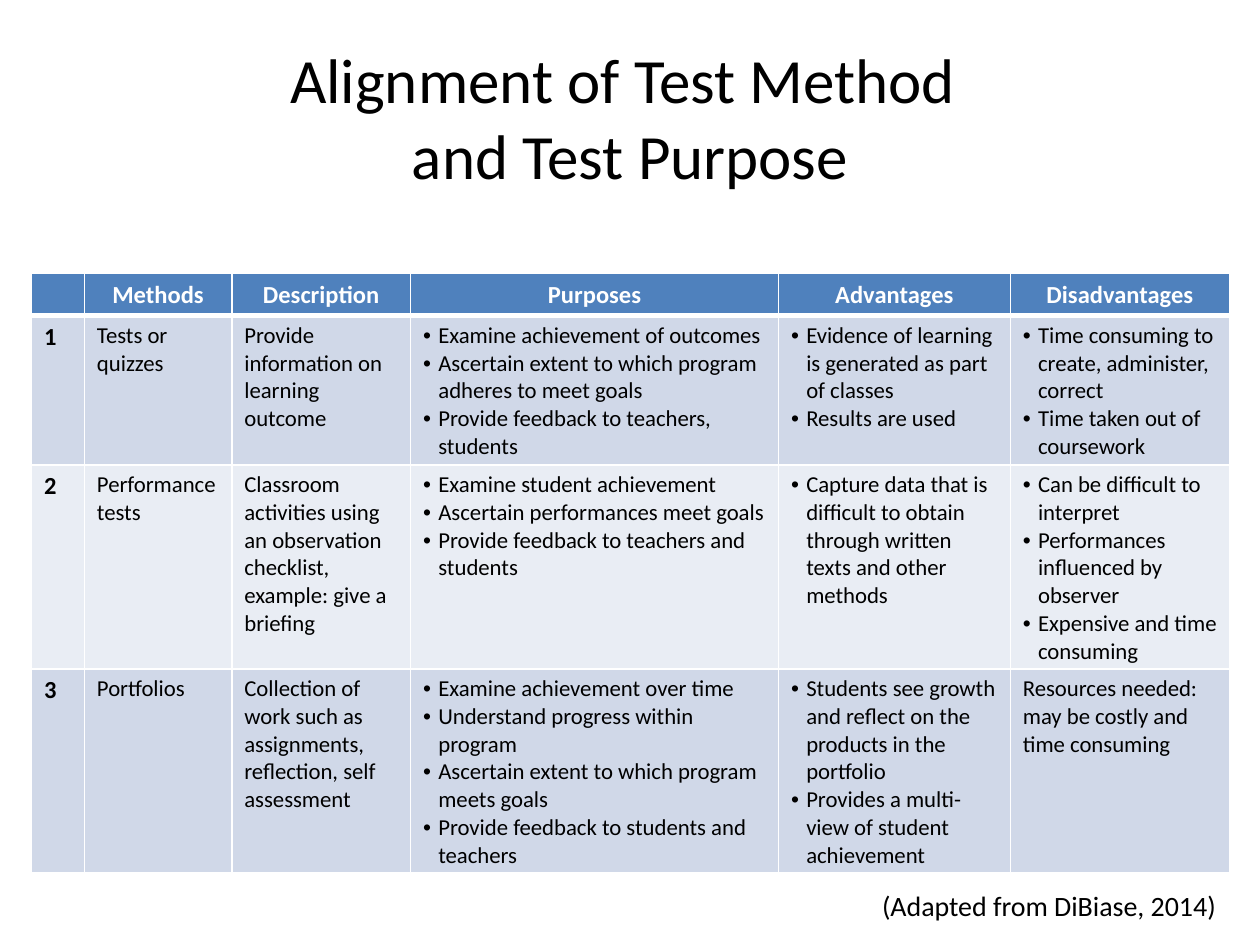
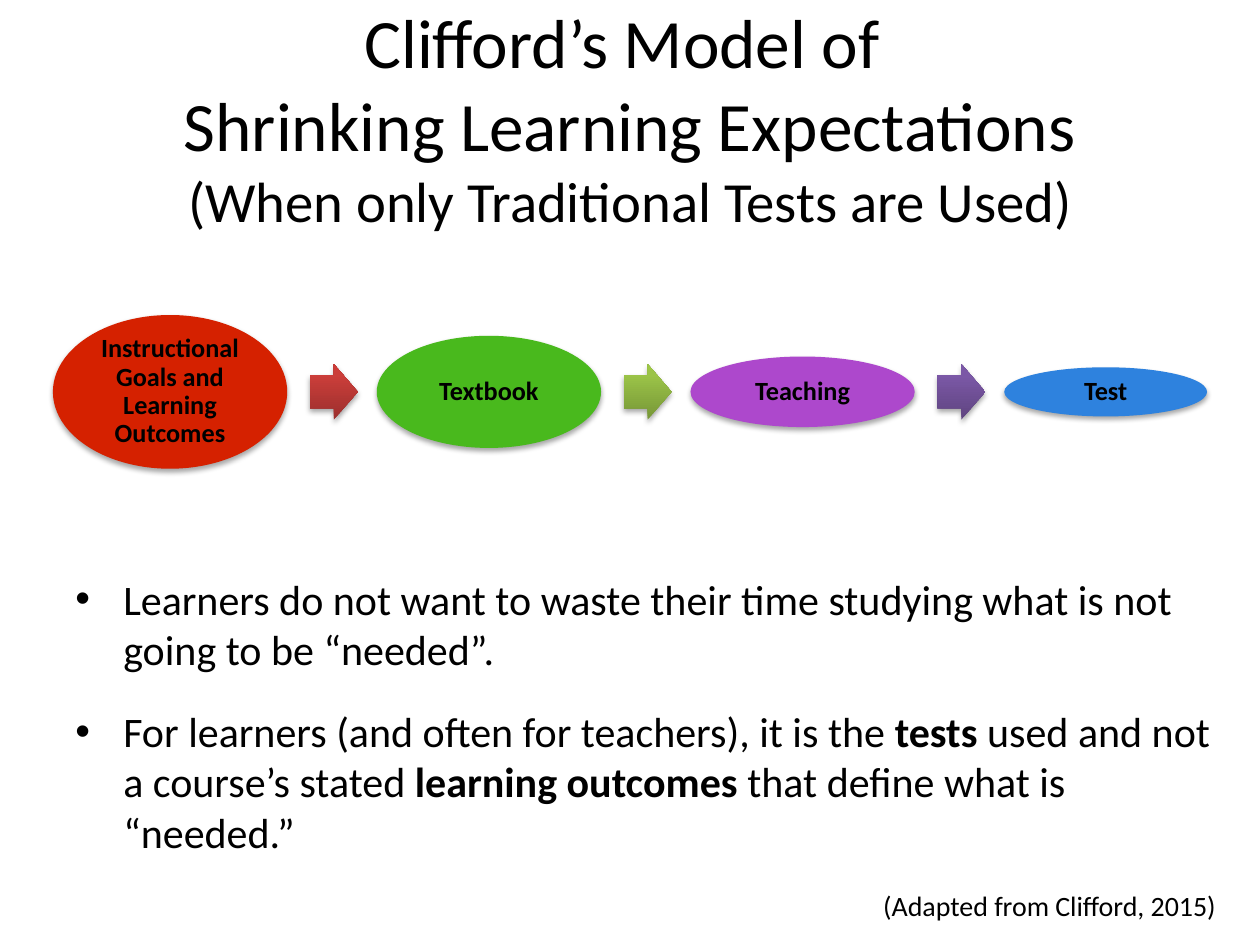
from lxml.etree import SubElement
from pptx import Presentation
from pptx.dml.color import RGBColor
from pptx.enum.shapes import MSO_SHAPE
from pptx.enum.text import MSO_ANCHOR, PP_ALIGN
from pptx.oxml import parse_xml
from pptx.oxml.ns import nsdecls, qn
from pptx.util import Inches, Pt

BLACK = RGBColor(0x00, 0x00, 0x00)
WHITE = RGBColor(0xFF, 0xFF, 0xFF)
HEADER_BLUE = RGBColor(0x4F, 0x81, 0xBD)
BAND_DARK = RGBColor(0xD0, 0xD8, 0xE8)
BAND_LIGHT = RGBColor(0xE9, 0xED, 0xF4)
RED = RGBColor(0xD5, 0x21, 0x00)
GREEN = RGBColor(0x49, 0xB9, 0x1D)
PURPLE = RGBColor(0xAD, 0x48, 0xCC)
BLUE = RGBColor(0x2E, 0x82, 0xDE)
FONT = "Calibri"

SHADOW = (f'<a:effectLst {nsdecls("a")}><a:outerShdw blurRad="39370" dist="22860" '
          'dir="5400000" rotWithShape="0"><a:srgbClr val="000000">'
          '<a:alpha val="35000"/></a:srgbClr></a:outerShdw></a:effectLst>')


def add_runs(paragraph, runs, color=BLACK, align=PP_ALIGN.LEFT):
    """Add (text, size, bold) runs; a vertical tab in the text breaks the line."""
    paragraph.alignment = align
    for text, size, bold in runs:
        for number, line in enumerate(text.split("\v")):
            if number:
                paragraph.add_line_break()
            if not line:
                continue
            run = paragraph.add_run()
            run.text = line
            font_format = {"name": FONT, "size": Pt(size), "bold": bold}
            for attribute, value in font_format.items():
                setattr(run.font, attribute, value)
            run.font.color.rgb = color


def add_bullet(paragraph, indent):
    properties = paragraph._p.get_or_add_pPr()
    properties.set("marL", str(Inches(indent)))
    properties.set("indent", str(-Inches(indent)))
    SubElement(properties, qn("a:buFont"), typeface="Arial")
    SubElement(properties, qn("a:buChar"), char="•")


presentation = Presentation()
presentation.slide_width = Inches(10)
presentation.slide_height = Inches(7.5)

# Title and source credit on both slides
headings = [
    ([("Alignment of Test Method \vand Test Purpose", 36, False)],
     "(Adapted from DiBiase, 2014)"),
    ([("Clifford’s Model of \vShrinking Learning Expectations\v", 39.6, False),
      ("(When only Traditional Tests are Used)", 32.4, False)],
     "(Adapted from Clifford, 2015)"),
]
slides = []
for title_runs, credit_text in headings:
    slide = presentation.slides.add_slide(presentation.slide_layouts[6])
    title = slide.shapes.add_textbox(Inches(0.5), Inches(0.3), Inches(9), Inches(1.25))
    title.text_frame.word_wrap = True
    title.text_frame.vertical_anchor = MSO_ANCHOR.MIDDLE
    add_runs(title.text_frame.paragraphs[0], title_runs, align=PP_ALIGN.CENTER)
    credit = slide.shapes.add_textbox(Inches(6), Inches(7), Inches(3.75), Inches(0.37))
    credit.text_frame.word_wrap = True
    add_runs(credit.text_frame.paragraphs[0], [(credit_text, 16, False)], align=PP_ALIGN.RIGHT)
    slides.append(slide)
methods_slide, model_slide = slides

# Table of test methods: a list in a cell is bulleted
methods = [
    ["", "Methods", "Description", "Purposes", "Advantages", "Disadvantages"],
    ["1", "Tests or quizzes", "Provide information on learning outcome",
     ["Examine achievement of outcomes",
      "Ascertain extent to which program adheres to meet goals",
      "Provide feedback to teachers, students"],
     ["Evidence of learning is generated as part of classes", "Results are used"],
     ["Time consuming to create, administer, correct", "Time taken out of coursework"]],
    ["2", "Performance tests",
     "Classroom activities using an observation checklist, example: give a briefing",
     ["Examine student achievement",
      "Ascertain performances meet goals",
      "Provide feedback to teachers and students"],
     ["Capture data that is difficult to obtain through written texts and other methods"],
     ["Can be difficult to interpret",
      "Performances influenced by observer",
      "Expensive and time consuming"]],
    ["3", "Portfolios",
     "Collection of work such as assignments, reflection, self assessment",
     ["Examine achievement over time",
      "Understand progress within program",
      "Ascertain extent to which program meets goals",
      "Provide feedback to students and teachers"],
     ["Students see growth and reflect on the products in the portfolio",
      "Provides a multi- view of student achievement"],
     "Resources needed: may be costly and time consuming"],
]
column_widths = [0.42, 1.17, 1.42, 2.92, 1.84, 1.74]
row_heights = [0.33, 0.96, 1.32, 1.32]
methods_frame = methods_slide.shapes.add_table(
    len(methods), len(column_widths), Inches(0.25), Inches(2.17), Inches(9.5), Inches(4.75))
methods_table = methods_frame.table
for column, width in zip(methods_table.columns, column_widths):
    column.width = Inches(width)
for row, height in zip(methods_table.rows, row_heights):
    row.height = Inches(height)
methods_frame.height = Inches(4.75)

for row_number, contents in enumerate(methods):
    is_header = row_number == 0
    band = HEADER_BLUE if is_header else (BAND_LIGHT, BAND_DARK)[row_number % 2]
    for column_number, content in enumerate(contents):
        cell = methods_table.cell(row_number, column_number)
        border_widths = {"lnL": 1, "lnR": 1, "lnT": 3 if row_number == 1 else 1,
                         "lnB": 3 if is_header else 1}
        for side, width in border_widths.items():
            border = SubElement(cell._tc.get_or_add_tcPr(), qn(f"a:{side}"), w=str(Pt(width)))
            SubElement(SubElement(border, qn("a:solidFill")), qn("a:srgbClr"), val=str(WHITE))
        cell.fill.solid()
        cell.fill.fore_color.rgb = band

        is_label = is_header or column_number == 0
        size = 14 if is_label else 13
        bulleted = isinstance(content, list)
        for number, line in enumerate(content if bulleted else [content]):
            text_frame = cell.text_frame
            paragraph = text_frame.add_paragraph() if number else text_frame.paragraphs[0]
            add_runs(paragraph, [(line, size, is_label)], WHITE if is_header else BLACK,
                     PP_ALIGN.CENTER if is_header else PP_ALIGN.LEFT)
            if bulleted:
                add_bullet(paragraph, 0.12)
            if not line:
                SubElement(paragraph._p, qn("a:endParaRPr"), sz=str(size * 100))

# Chain of shrinking ellipses: text, width, height, inset, colour, gradient of next arrow
stages = [
    ("Instructional Goals and Learning Outcomes", 1.86, 1.22, 0.10, RED,
     ("9C2F2D", "CB3E3A", "CE3B37")),
    ("Textbook", 1.78, 0.89, 0.09, GREEN, ("779737", "9BC348", "9DC746")),
    ("Teaching", 1.78, 0.56, 0.08, PURPLE, ("5F4480", "7B58A6", "7C57A8")),
    ("Test", 1.61, 0.39, 0.07, BLUE, None),
]
chain_middle = 3.11
arrow_width, arrow_height = 0.38, 0.44
gap_before_arrow, gap_after_arrow = 0.18, 0.15
left = 0.42
for text, width, height, inset, color, arrow_colors in stages:
    stage = model_slide.shapes.add_shape(
        MSO_SHAPE.OVAL, Inches(left), Inches(chain_middle - height / 2),
        Inches(width), Inches(height))
    stage.fill.solid()
    stage.fill.fore_color.rgb = color
    stage.line.fill.background()
    stage._element.spPr.append(parse_xml(SHADOW))
    stage_text = stage.text_frame
    frame_format = {"word_wrap": True, "vertical_anchor": MSO_ANCHOR.MIDDLE}
    frame_format |= {f"margin_{side}": Inches(inset)
                     for side in ("left", "top", "right", "bottom")}
    for attribute, value in frame_format.items():
        setattr(stage_text, attribute, value)
    stage_text.paragraphs[0].line_spacing = 0.9
    add_runs(stage_text.paragraphs[0], [(text, 15, True)], align=PP_ALIGN.CENTER)
    left += width + gap_before_arrow

    if arrow_colors:
        arrow = model_slide.shapes.add_shape(
            MSO_SHAPE.RIGHT_ARROW, Inches(left), Inches(chain_middle - arrow_height / 2),
            Inches(arrow_width), Inches(arrow_height))
        arrow.adjustments[0] = 0.6
        arrow.adjustments[1] = 0.5
        arrow.line.fill.background()
        stops = "".join(f'<a:gs pos="{position}"><a:srgbClr val="{stop}"/></a:gs>'
                        for position, stop in zip((0, 80000, 100000), arrow_colors))
        arrow._element.spPr.find(qn("a:prstGeom")).addnext(parse_xml(
            f'<a:gradFill {nsdecls("a")} rotWithShape="1"><a:gsLst>{stops}</a:gsLst>'
            '<a:lin ang="16200000" scaled="0"/></a:gradFill>'))
        arrow._element.spPr.append(parse_xml(SHADOW))
        left += arrow_width + gap_after_arrow

# Conclusions under the chain
conclusions = [
    [("Learners do not want to waste their time studying what is not going to be “needed”.",
      24, False)],
    [("For learners (and often for teachers), it is the ", 24, False),
     ("tests", 24, True),
     (" used and not a course’s stated ", 24, False),
     ("learning outcomes", 24, True),
     (" that define what is “needed.”", 24, False)],
]
body = model_slide.shapes.add_textbox(Inches(0.5), Inches(4.5), Inches(9.42), Inches(3.33))
body.text_frame.word_wrap = True
for number, runs in enumerate(conclusions):
    paragraph = body.text_frame.add_paragraph() if number else body.text_frame.paragraphs[0]
    paragraph.space_before = Pt(12)
    paragraph.space_after = Pt(6)
    add_runs(paragraph, runs)
    add_bullet(paragraph, 0.38)

presentation.save("out.pptx")
